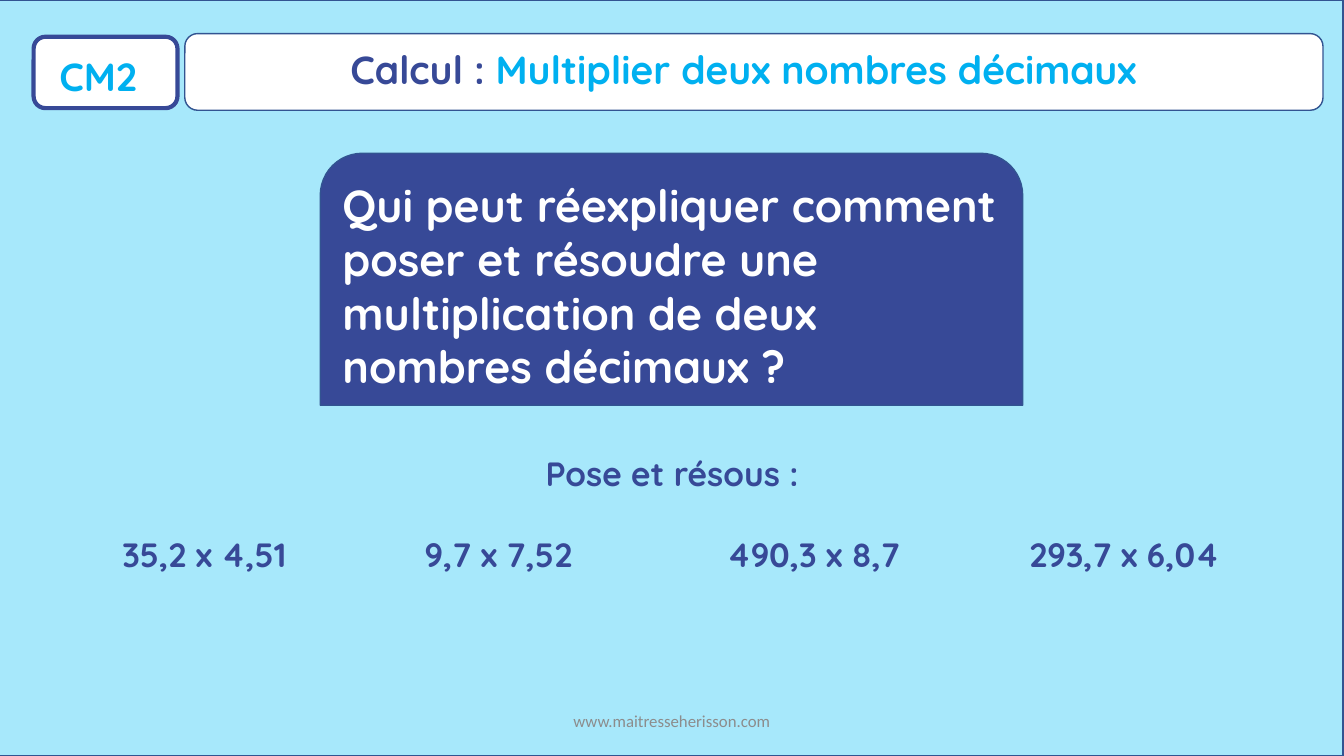
from lxml import etree
from pptx import Presentation
from pptx.dml.color import RGBColor
from pptx.enum.shapes import MSO_SHAPE as Shape
from pptx.enum.text import MSO_ANCHOR as Anchor, MSO_AUTO_SIZE as AutoSize, PP_ALIGN as Align
from pptx.oxml.ns import qn
from pptx.util import Emu, Pt

EMU_PER_PX = 9525
COLORS = {"sky": "A7E8FB", "white": "FFFFFF", "indigo": "374997",
          "outline": "325491", "cyan": "00B0F0", "grey": "8C8C8C"}
EXERCISES = ["35,2 x 4,51", "9,7 x 7,52", "490,3 x 8,7", "293,7 x 6,04"]
EXERCISE_STEP = 288


def px(length):
    return Emu(length * EMU_PER_PX)


def color(name):
    return RGBColor.from_string(COLORS[name])


def add_panel(slide, kind, box, fill, line="outline", weight=1):
    panel = slide.shapes.add_shape(kind, *map(px, box))
    panel.shadow.inherit = False
    panel.fill.solid()
    panel.fill.fore_color.rgb = color(fill)
    panel.line.color.rgb = color(line)
    panel.line.width = Pt(weight)
    return panel


def add_text_box(slide, box):
    return slide.shapes.add_textbox(*map(px, box))


def prepare_frame(shape, anchor=Anchor.TOP):
    frame = shape.text_frame
    settings = {"word_wrap": True, "auto_size": AutoSize.NONE, "vertical_anchor": anchor}
    for name, value in settings.items():
        setattr(frame, name, value)
    return frame


def write(para, spans, size, align=Align.LEFT, name="Quicksand", bold=True):
    """Fill a paragraph with (text, colour name) spans."""
    para.alignment = align
    for text, tint in spans:
        span = para.add_run()
        span.text = text
        for attribute, value in {"name": name, "size": Pt(size), "bold": bold}.items():
            setattr(span.font, attribute, value)
        span.font.color.rgb = color(tint)


def add_tab_stops(para, positions):
    tabs = etree.SubElement(para._p.get_or_add_pPr(), qn("a:tabLst"))
    for position in positions:
        etree.SubElement(tabs, qn("a:tab"), pos=str(px(position)), algn="l")


def add_level_badge(slide, box):
    left, top, width, height = box
    add_panel(slide, Shape.ROUNDED_RECTANGLE, box, "white", "indigo", 3)
    label = add_text_box(slide, (left + 15, top + 10, width - 30, height - 13))
    write(prepare_frame(label).paragraphs[0], [("CM2", "cyan")], 28)


def add_title_bar(slide, box):
    left, top, width, height = box
    bar = add_panel(slide, Shape.ROUNDED_RECTANGLE, box, "white")
    title = slide.shapes.title
    bar._element.addnext(title._element)
    place = {"left": left + 7, "top": top + 6, "width": width - 34, "height": height - 18}
    for name, value in place.items():
        setattr(title, name, px(value))
    spans = [("Calcul : ", "indigo"), ("Multiplier deux nombres décimaux", "cyan")]
    write(prepare_frame(title).paragraphs[0], spans, 28, Align.CENTER)


def add_question(slide, box):
    panel = add_panel(slide, Shape.ROUND_2_SAME_RECTANGLE, box, "indigo")
    question = ("Qui peut réexpliquer comment poser et résoudre une "
                "multiplication de deux nombres décimaux ?")
    write(prepare_frame(panel, Anchor.MIDDLE).paragraphs[0], [(question, "white")], 32)


def add_exercises(slide, box):
    frame = prepare_frame(add_text_box(slide, box))
    write(frame.paragraphs[0], [("Pose et résous :", "indigo")], 24, Align.CENTER)
    row = frame.add_paragraph()
    row.space_before = Pt(29)
    add_tab_stops(row, [EXERCISE_STEP * index for index in range(1, len(EXERCISES))])
    write(row, [("\t".join(EXERCISES), "indigo")], 24)


def add_footer(slide, box):
    para = prepare_frame(add_text_box(slide, box), Anchor.MIDDLE).paragraphs[0]
    write(para, [("www.maitresseherisson.com", "grey")], 12, Align.CENTER, "Calibri", False)


def main():
    deck = Presentation()
    deck.slide_width, deck.slide_height = px(1280), px(720)
    slide = deck.slides.add_slide(deck.slide_layouts[5])
    add_panel(slide, Shape.RECTANGLE, (-1, 0, 1280, 720), "sky")
    add_level_badge(slide, (32, 35, 137, 68))
    add_footer(slide, (424, 667, 432, 38))
    add_title_bar(slide, (176, 32, 1084, 73))
    add_question(slide, (305, 146, 669, 240))
    add_exercises(slide, (107, 427, 1066, 126))
    deck.save("out.pptx")


if __name__ == "__main__":
    main()
